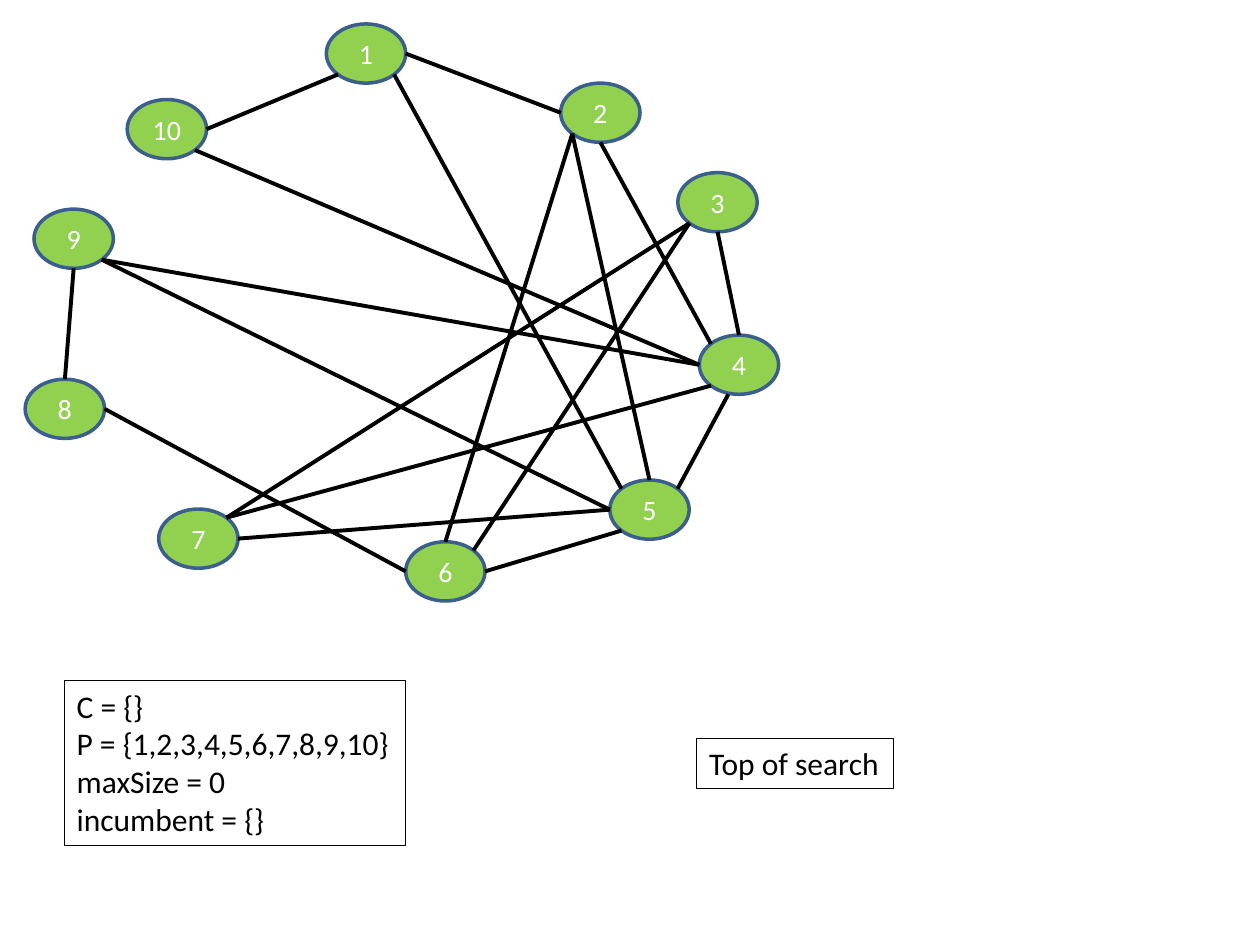
from math import cos, radians, sin

from lxml import etree
from pptx import Presentation
from pptx.dml.color import RGBColor
from pptx.enum.shapes import MSO_CONNECTOR, MSO_SHAPE
from pptx.enum.text import MSO_ANCHOR, MSO_AUTO_SIZE, PP_ALIGN
from pptx.oxml.ns import qn
from pptx.util import Inches, Pt

STRAIGHT = MSO_CONNECTOR.STRAIGHT
OVAL = MSO_SHAPE.OVAL
MIDDLE = MSO_ANCHOR.MIDDLE
FIT_SHAPE = MSO_AUTO_SIZE.SHAPE_TO_FIT_TEXT
CENTER = PP_ALIGN.CENTER

THEME = {
    "font": "Calibri",
    "node_fill": RGBColor(0x92, 0xD0, 0x50),
    "node_line": RGBColor(0x3A, 0x5F, 0x8C),
    "node_text": RGBColor(0xFF, 0xFF, 0xFF),
    "ink": RGBColor(0, 0, 0),
    "node_size": Pt(16),
    "note_size": Pt(18),
    "node_border": Pt(2),
    "edge_width": Pt(2.25),
    "note_border": Pt(0.75),
}

NODE_WIDTH, NODE_HEIGHT = 0.63, 0.47
NODES = {
    1: (2.59, 0.19),
    2: (4.45, 0.66),
    3: (5.38, 1.37),
    4: (5.55, 2.66),
    5: (4.84, 3.81),
    6: (3.22, 4.3),
    7: (1.26, 4.04),
    8: (0.2, 3.01),
    9: (0.27, 1.66),
    10: (1.01, 0.79),
}

SITES = ["N", "NW", "W", "SW", "S", "SE", "E", "NE"]
LOWER_EDGE_OF_4 = (5.78, 3.13)
EDGES = [
    ((1, "E"), (2, "W")),
    ((1, "SE"), (5, "NW")),
    ((10, "E"), (1, "SW")),
    ((2, "S"), (4, "NW")),
    ((8, "N"), (9, "S")),
    ((5, "N"), (2, "SW")),
    ((2, "SW"), (6, "N")),
    ((4, "N"), (3, "S")),
    ((3, "SW"), (6, "NE")),
    ((3, "SW"), (7, "NE")),
    ((5, "NE"), LOWER_EDGE_OF_4),
    ((7, "NE"), (4, "SW")),
    ((9, "SE"), (4, "W")),
    ((10, "SE"), (4, "W")),
    ((6, "E"), (5, "SW")),
    ((7, "E"), (5, "W")),
    ((9, "SE"), (5, "W")),
    ((6, "W"), (8, "E")),
]

NOTES = [
    ((0.51, 5.4, 2.71, 1.31),
     ["C = {}", "P = {1,2,3,4,5,6,7,8,9,10}", "maxSize = 0", "incumbent = {}"]),
    ((5.53, 5.86, 1.56, 0.4), ["Top of search"]),
]


def style_font(paragraph, size, color):
    paragraph.font.name = THEME["font"]
    paragraph.font.size = size
    paragraph.font.color.rgb = color


def add_node(graph, number):
    left, top = NODES[number]
    node = graph.shapes.add_shape(
        OVAL, Inches(left), Inches(top), Inches(NODE_WIDTH), Inches(NODE_HEIGHT))
    node.shadow.inherit = False
    node.fill.solid()
    node.fill.fore_color.rgb = THEME["node_fill"]
    node.line.color.rgb = THEME["node_line"]
    node.line.width = THEME["node_border"]
    node.text_frame.vertical_anchor = MIDDLE
    label = node.text_frame.paragraphs[0]
    label.text = str(number)
    label.alignment = CENTER
    style_font(label, THEME["node_size"], THEME["node_text"])
    return node


def end_point(end):
    if end[1] not in SITES:
        return end
    number, site = end
    left, top = NODES[number]
    angle = radians(90 + 45 * SITES.index(site))
    return (left + NODE_WIDTH / 2 * (1 + cos(angle)),
            top + NODE_HEIGHT / 2 * (1 - sin(angle)))


def add_edge(graph, nodes, start, finish):
    points = [Inches(value) for end in (start, finish) for value in end_point(end)]
    edge = graph.shapes.add_connector(STRAIGHT, *points)
    edge.line.color.rgb = THEME["ink"]
    edge.line.width = THEME["edge_width"]
    etree.SubElement(edge._element.spPr, qn("a:effectLst"))
    joints = edge._element.nvCxnSpPr.cNvCxnSpPr
    for end, tag in ((start, "a:stCxn"), (finish, "a:endCxn")):
        if end[1] in SITES:
            joint = etree.SubElement(joints, qn(tag))
            joint.set("id", str(nodes[end[0]].shape_id))
            joint.set("idx", str(SITES.index(end[1])))


def add_note(slide, box, lines):
    note = slide.shapes.add_textbox(*map(Inches, box))
    note.line.color.rgb = THEME["ink"]
    note.line.width = THEME["note_border"]
    frame = note.text_frame
    frame.word_wrap = False
    frame.auto_size = FIT_SHAPE
    frame.text = "\n".join(lines)
    for paragraph in frame.paragraphs:
        style_font(paragraph, THEME["note_size"], THEME["ink"])


def main():
    deck = Presentation()
    deck.slide_width, deck.slide_height = Inches(10), Inches(7.5)
    slide = deck.slides.add_slide(deck.slide_layouts[6])
    graph = slide.shapes.add_group_shape()
    nodes = {number: add_node(graph, number) for number in NODES}
    for start, finish in EDGES:
        add_edge(graph, nodes, start, finish)
    for box, lines in NOTES:
        add_note(slide, box, lines)
    deck.save("out.pptx")


if __name__ == "__main__":
    main()
